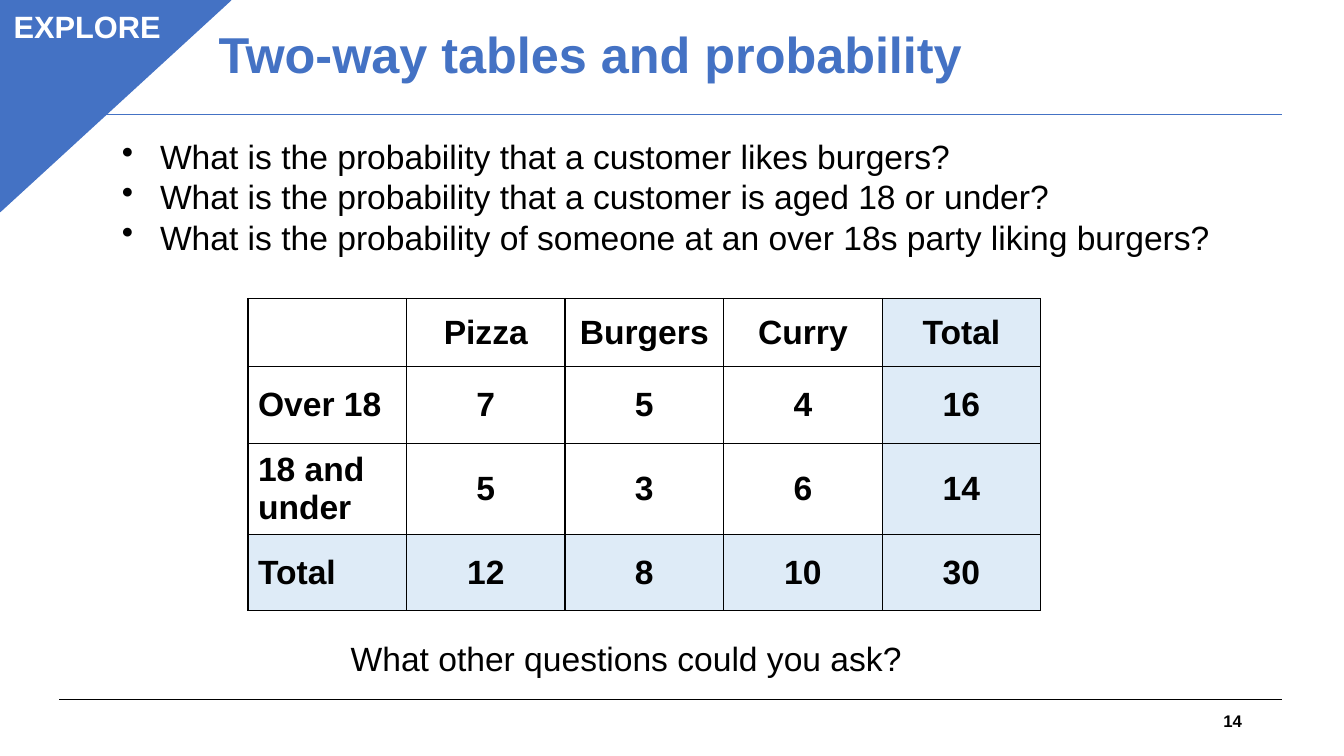
from lxml import etree
from pptx import Presentation
from pptx.dml.color import RGBColor
from pptx.enum.shapes import MSO_CONNECTOR, MSO_SHAPE
from pptx.enum.text import MSO_ANCHOR, PP_ALIGN
from pptx.oxml.ns import qn
from pptx.util import Inches, Pt

BLUE = RGBColor(0x44, 0x72, 0xC4)
PALE_BLUE = RGBColor(0xDE, 0xEB, 0xF7)
BLACK = RGBColor(0, 0, 0)
WHITE = RGBColor(255, 255, 255)

QUESTIONS = [
    "What is the probability that a customer likes burgers?",
    "What is the probability that a customer is aged 18 or under?",
    "What is the probability of someone at an over 18s party liking burgers?",
]
SURVEY = [
    ["", "Pizza", "Burgers", "Curry", "Total"],
    ["Over 18", "7", "5", "4", "16"],
    ["18 and under", "5", "3", "6", "14"],
    ["Total", "12", "8", "10", "30"],
]
ROW_HEIGHTS = [0.68, 0.76, 0.76, 0.76]
COLUMN_WIDTH = 1.573


def add_span(para, text, size=24, color=BLACK, bold=False):
    span = para.add_run()
    span.text = text
    span.font.name = "Arial"
    span.font.size = Pt(size)
    span.font.color.rgb = color
    span.font.bold = bold


def add_text(page, place, lines, align=PP_ALIGN.LEFT, anchor=MSO_ANCHOR.TOP, **style):
    """Add a text box with one paragraph per line and return its paragraphs."""
    box = page.shapes.add_textbox(*map(Inches, place))
    frame = box.text_frame
    frame.word_wrap = True
    frame.vertical_anchor = anchor
    for index, line in enumerate(lines):
        para = frame.add_paragraph() if index else frame.paragraphs[0]
        para.alignment = align
        add_span(para, line, **style)
    return frame.paragraphs


def add_bullet(para, indent):
    properties = para._p.get_or_add_pPr()
    properties.set("marL", str(Inches(indent)))
    properties.set("indent", str(-Inches(indent)))
    etree.SubElement(properties, qn("a:buChar"), char="•")


def add_rule(page, top, color):
    rule = page.shapes.add_connector(
        MSO_CONNECTOR.STRAIGHT, Inches(0.59), Inches(top), Inches(12.72), Inches(top))
    rule.line.color.rgb = color
    rule.line.width = Pt(0.75)
    etree.SubElement(rule._element.spPr, qn("a:effectLst"))


def add_blue_shape(page, kind, place, line_width):
    shape = page.shapes.add_shape(kind, *map(Inches, place))
    shape.shadow.inherit = False
    shape.fill.solid()
    shape.fill.fore_color.rgb = BLUE
    shape.line.color.rgb = BLUE
    shape.line.width = Pt(line_width)
    return shape


def add_corner_label(page):
    corner = add_blue_shape(page, MSO_SHAPE.ISOSCELES_TRIANGLE, (0, 0, 2.29, 2.1), 1)
    corner.adjustments[0] = 0
    corner._element.spPr.find(qn("a:xfrm")).set("flipV", "1")
    label = add_blue_shape(page, MSO_SHAPE.RECTANGLE, (0, 0.02, 1.73, 0.47), 0.75)
    para = label.text_frame.paragraphs[0]
    para.alignment = PP_ALIGN.CENTER
    add_span(para, "EXPLORE", 22, WHITE, True)


def add_borders(cell):
    properties = cell._tc.get_or_add_tcPr()
    for index, side in enumerate(("lnL", "lnR", "lnT", "lnB")):
        border = etree.Element(qn(f"a:{side}"), w=str(Pt(1)))
        fill = etree.SubElement(border, qn("a:solidFill"))
        etree.SubElement(fill, qn("a:srgbClr"), val=str(BLACK))
        properties.insert(index, border)


def add_survey_table(page):
    row_count, column_count = len(SURVEY), len(SURVEY[0])
    table = page.shapes.add_table(
        row_count, column_count, Inches(2.46), Inches(2.96),
        Inches(COLUMN_WIDTH * column_count), Inches(sum(ROW_HEIGHTS))).table
    for column in table.columns:
        column.width = Inches(COLUMN_WIDTH)
    for r, values in enumerate(SURVEY):
        table.rows[r].height = Inches(ROW_HEIGHTS[r])
        for c, value in enumerate(values):
            cell = table.cell(r, c)
            is_total = "Total" in (values[0], SURVEY[0][c])
            cell.fill.solid()
            cell.fill.fore_color.rgb = PALE_BLUE if is_total else WHITE
            cell.vertical_anchor = MSO_ANCHOR.MIDDLE
            add_borders(cell)
            if value:
                para = cell.text_frame.paragraphs[0]
                para.alignment = PP_ALIGN.CENTER if c else PP_ALIGN.LEFT
                add_span(para, value, bold=True)


def main():
    deck = Presentation()
    deck.slide_width, deck.slide_height = Inches(13.333), Inches(7.5)
    page = deck.slides.add_slide(deck.slide_layouts[6])

    add_rule(page, 6.94, BLACK)
    add_rule(page, 1.14, BLUE)
    title = add_text(page, (2.07, 0.11, 10.34, 0.92), ["Two-way tables and probability"],
                     anchor=MSO_ANCHOR.MIDDLE, size=36, color=BLUE, bold=True)
    title[0].line_spacing = 0.9
    closing = add_text(page, (3.38, 6.33, 6.18, 0.62), ["What other questions could you ask?"])
    closing[0].line_spacing = Pt(25)
    closing[0].space_after = Pt(6)
    add_survey_table(page)
    for para in add_text(page, (1.11, 1.3, 11.44, 1.31), QUESTIONS):
        add_bullet(para, 0.38)
    add_corner_label(page)
    add_text(page, (9.42, 6.95, 3, 0.4), ["14"], PP_ALIGN.RIGHT, MSO_ANCHOR.MIDDLE,
             size=12, bold=True)
    deck.save("out.pptx")


if __name__ == "__main__":
    main()
